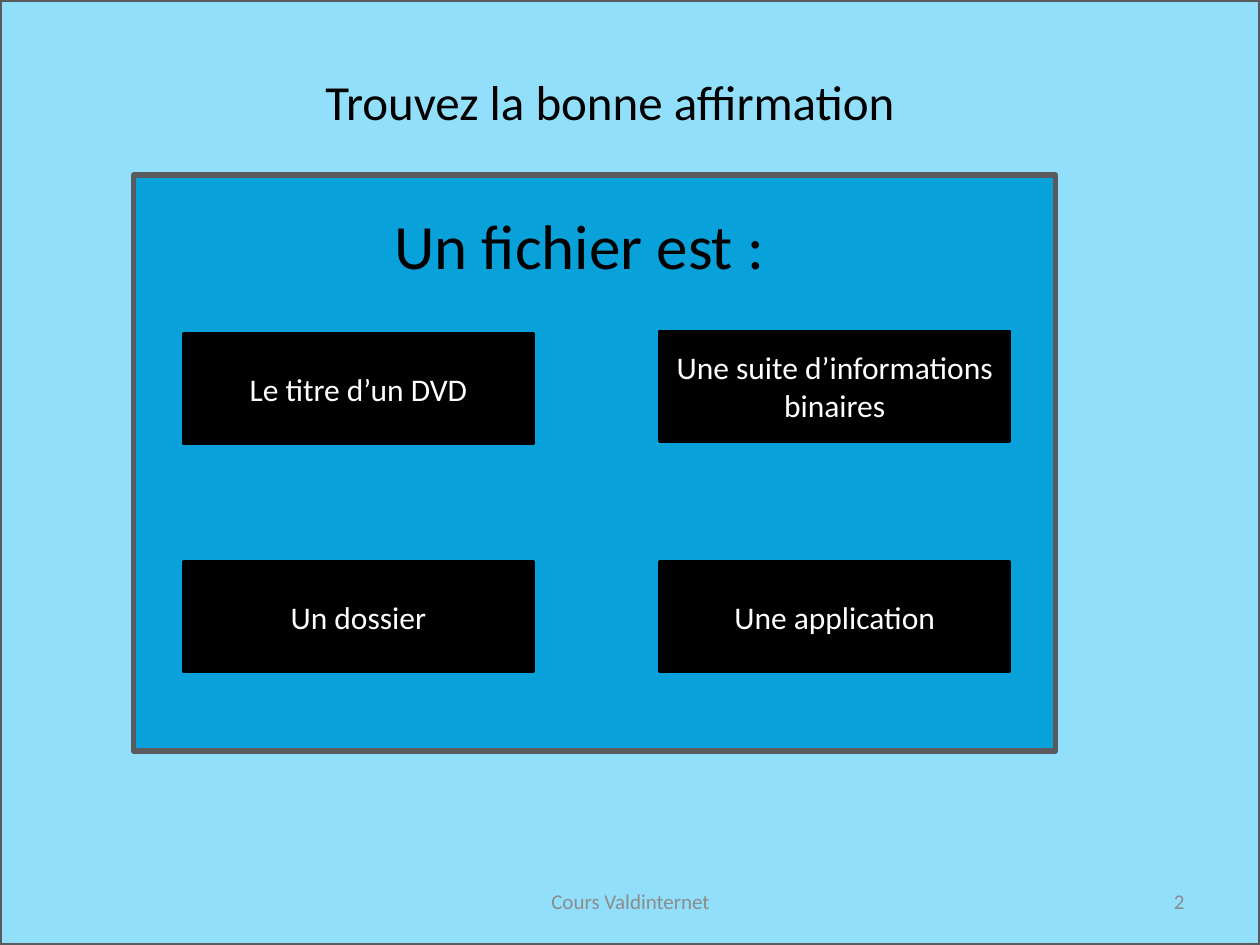
from dataclasses import dataclass
from pptx import Presentation
from pptx.dml.color import RGBColor as Rgb
from pptx.enum.shapes import MSO_SHAPE as Kind
from pptx.enum.text import MSO_ANCHOR as Anchor, MSO_AUTO_SIZE as Fit, PP_ALIGN as Align
from pptx.util import Emu, Pt

PX = 9144  # 100 px to the inch


@dataclass(frozen=True)
class Theme:
    font: str = "Calibri"
    sky: str = "91DFFB"
    blue: str = "08A1D9"
    edge: str = "5A5B5D"
    dark: str = "000000"
    light: str = "FFFFFF"
    grey: str = "8C8C8C"
    title: int = 28
    ask: int = 36
    card: int = 18
    foot: int = 12


THEME = Theme()


def scale(box):
    return [Emu(n * PX) for n in box]


def write(shape, text, size, color, align=Align.CENTER, anchor=Anchor.MIDDLE, wrap=True):
    frame = shape.text_frame
    frame.word_wrap = wrap
    frame.vertical_anchor = anchor
    para = frame.paragraphs[0]
    para.alignment = align
    run = para.add_run()
    run.text = text
    font = run.font
    font.name, font.size = THEME.font, Pt(size)
    font.color.rgb = Rgb.from_string(color)
    return frame


def add_rect(slide, box, fill, edge, width):
    rect = slide.shapes.add_shape(Kind.RECTANGLE, *scale(box))
    rect.shadow.inherit = False
    rect.fill.solid()
    rect.fill.fore_color.rgb = Rgb.from_string(fill)
    rect.line.color.rgb = Rgb.from_string(edge)
    rect.line.width = Pt(width)
    return rect


def add_title(slide, box, text):
    title = slide.shapes.title
    title.left, title.top, title.width, title.height = scale(box)
    write(title, text, THEME.title, THEME.dark, anchor=Anchor.TOP).auto_size = Fit.NONE
    # Bring the title in front of the backdrop
    slide.shapes._spTree.append(title._element)


def add_quiz(slide, box, ask, cards):
    left, top, _, _ = box
    add_rect(slide, box, THEME.blue, THEME.edge, 3)

    # Question
    label = slide.shapes.add_textbox(*scale((left + 197, top + 20, 317, 71)))
    frame = write(label, ask, THEME.ask, THEME.dark, Align.LEFT, Anchor.TOP, wrap=False)
    frame.auto_size = Fit.SHAPE_TO_FIT_TEXT

    # Answers: two columns, two rows, with a small lift where given
    for i, (text, lift) in enumerate(cards):
        row, col = divmod(i, 2)
        spot = (left + 40 + col * 378, top + 126 + row * 181 - lift, 277, 87)
        card = add_rect(slide, spot, THEME.dark, THEME.dark, 2)
        write(card, text, THEME.card, THEME.light)


def add_foot(slide, box, name, page):
    left, top, width, height = box
    parts = (
        (name, left, 317, Align.CENTER),
        (page, left + width - 233, 233, Align.RIGHT),
    )
    for text, x, wide, align in parts:
        note = slide.shapes.add_textbox(*scale((x, top, wide, height)))
        write(note, text, THEME.foot, THEME.grey, align)


def main():
    deck = Presentation()
    deck.slide_width, deck.slide_height = scale((1000, 750))
    slide = deck.slides.add_slide(deck.slide_layouts[5])

    # Backdrop
    add_rect(slide, (0, 0, 1000, 750), THEME.sky, THEME.edge, 2)
    add_quiz(slide, (106, 139, 732, 457), "Un fichier est :", (
        ("Le titre d’un DVD", 0),
        ("Une suite d’informations binaires", 2),
        ("Un dossier", 0),
        ("Une application", 0),
    ))
    add_title(slide, (114, 52, 740, 57), "Trouvez la bonne affirmation")
    add_foot(slide, (342, 695, 608, 40), "Cours Valdinternet", "2")
    deck.save("out.pptx")


if __name__ == "__main__":
    main()
